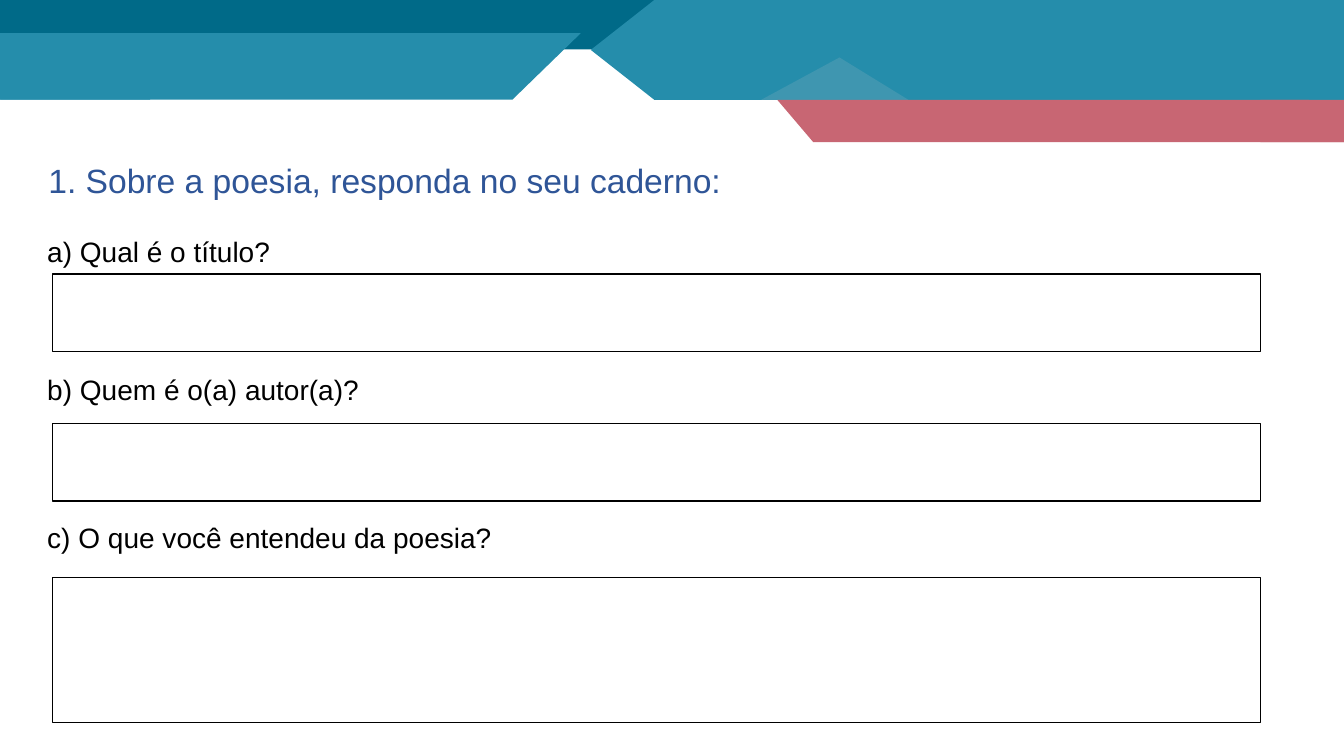
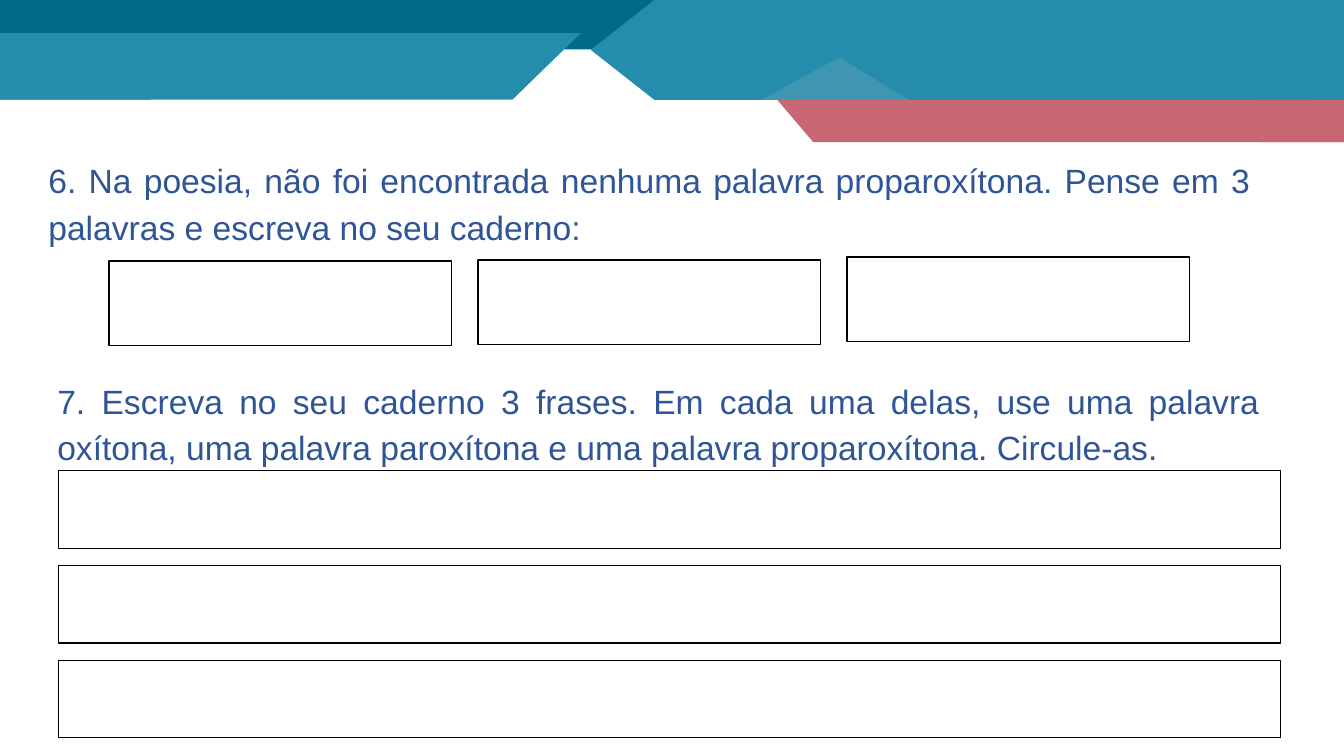
from dataclasses import dataclass

from pptx import Presentation
from pptx.dml.color import RGBColor
from pptx.enum.shapes import MSO_SHAPE
from pptx.enum.text import MSO_ANCHOR, MSO_AUTO_SIZE, PP_ALIGN
from pptx.oxml.ns import qn
from pptx.util import Inches, Pt

RECTANGLE = MSO_SHAPE.RECTANGLE
PARALLELOGRAM = MSO_SHAPE.PARALLELOGRAM
PENTAGON = MSO_SHAPE.PENTAGON
TRIANGLE = MSO_SHAPE.ISOSCELES_TRIANGLE
JUSTIFY = PP_ALIGN.JUSTIFY
TOP = MSO_ANCHOR.TOP
GROW = MSO_AUTO_SIZE.SHAPE_TO_FIT_TEXT
TITLE_ONLY = 5


@dataclass(frozen=True)
class Theme:
    font: str = "Arial"
    question_size: int = 24
    item_size: int = 20
    question_spacing: float = 1.15
    question: str = "2F5597"
    text: str = "000000"
    paper: str = "FFFFFF"
    dark_teal: str = "006A88"
    teal: str = "258DAB"
    light_teal: str = "3F96B0"
    rose: str = "C86673"


THEME = Theme()

# Header band: preset, left, top, width, height, colour, adjustment, mirrored
HEADER = [
    (PARALLELOGRAM, 0, 0, 7.2, 0.49, THEME.dark_teal, 1.028, False),
    (RECTANGLE, 0, 0, 1.49, 0.49, THEME.dark_teal, None, False),
    (PARALLELOGRAM, 0, 0.33, 5.76, 0.66, THEME.teal, 1.028, False),
    (RECTANGLE, 0, 0.33, 1.49, 0.66, THEME.teal, None, False),
    (PENTAGON, 5.86, 0, 7.48, 0.99, THEME.teal, 0.636, True),
    (TRIANGLE, 7.55, 0.57, 1.46, 0.42, THEME.light_teal, 0.532, False),
    (PARALLELOGRAM, 7.71, 0.99, 5.63, 0.42, THEME.rose, 0.85, True),
    (RECTANGLE, 12.5, 0.99, 0.83, 0.42, THEME.rose, None, False),
]


class Worksheet:
    """Holds the style and the slide being drawn."""

    def __init__(self, presentation, theme):
        self.presentation = presentation
        self.theme = theme
        self.slide = None

    def new_slide(self, title, width):
        layout = self.presentation.slide_layouts[TITLE_ONLY]
        self.slide = self.presentation.slides.add_slide(layout)
        self.header()
        shape = self.slide.shapes.title
        shape.left, shape.top = Inches(0.38), Inches(1.48)
        shape.width, shape.height = Inches(width), Inches(0.57)
        self.fill_question(shape, title)

    def header(self):
        group = self.slide.shapes.add_group_shape()
        for preset, left, top, width, height, color, adjustment, mirrored in HEADER:
            shape = self.filled(group.shapes, preset, left, top, width, height, color)
            shape.line.fill.background()
            if adjustment is not None:
                shape.adjustments[0] = adjustment
            if mirrored:
                shape.element.spPr.find(qn("a:xfrm")).set("flipH", "1")

    def filled(self, shapes, preset, left, top, width, height, color):
        shape = shapes.add_shape(
            preset, Inches(left), Inches(top), Inches(width), Inches(height))
        shape.shadow.inherit = False
        shape.fill.solid()
        shape.fill.fore_color.rgb = RGBColor.from_string(color)
        return shape

    def answer_box(self, left, top, width, height=0.77):
        shape = self.filled(self.slide.shapes, RECTANGLE, left, top, width, height,
                            self.theme.paper)
        shape.line.color.rgb = RGBColor.from_string(self.theme.text)
        shape.line.width = Pt(1)

    def text_box(self, left, top, width, height):
        return self.slide.shapes.add_textbox(
            Inches(left), Inches(top), Inches(width), Inches(height))

    def question(self, text, left, top, width):
        self.fill_question(self.text_box(left, top, width, 1.03), text)

    def item(self, text, top):
        self.fill_text(self.text_box(0.37, top, 12.13, 0.44), text,
                       self.theme.item_size, self.theme.text)

    def fill_question(self, shape, text):
        paragraph = self.fill_text(shape, text, self.theme.question_size,
                                   self.theme.question)
        paragraph.line_spacing = self.theme.question_spacing

    def fill_text(self, shape, text, size, color):
        frame = shape.text_frame
        frame.word_wrap = True
        frame.auto_size = GROW
        frame.vertical_anchor = TOP
        paragraph = frame.paragraphs[0]
        paragraph.alignment = JUSTIFY
        run = paragraph.add_run()
        run.text = text
        run.font.name = self.theme.font
        run.font.size = Pt(size)
        run.font.color.rgb = RGBColor.from_string(color)
        return paragraph


def reading_slide(sheet):
    sheet.new_slide("1. Sobre a poesia, responda no seu caderno:", 11.4)
    # Each item: text, text top, box top, box height
    items = [
        ("a) Qual é o título?", 2.28, 2.72, 0.77),
        ("b) Quem é o(a) autor(a)?", 3.65, 4.2, 0.77),
        ("c) O que você entendeu da poesia?", 5.11, 5.73, 1.44),
    ]
    for text, text_top, box_top, box_height in items:
        sheet.item(text, text_top)
        sheet.answer_box(0.52, box_top, 11.98, box_height)


def stress_slide(sheet):
    sheet.new_slide(
        "6. Na poesia, não foi encontrada nenhuma palavra proparoxítona. "
        "Pense em 3 palavras e escreva no seu caderno:", 12.12)
    # One box for each word
    for column, top in enumerate((2.59, 2.58, 2.55)):
        sheet.answer_box(1.08 + 3.66 * column, top, 3.4, 0.84)

    sheet.question(
        "7. Escreva no seu caderno 3 frases. Em cada uma delas, use uma palavra "
        "oxítona, uma palavra paroxítona e uma palavra proparoxítona. Circule-as.",
        0.47, 3.67, 12.12)
    # One box for each sentence
    for row in range(3):
        sheet.answer_box(0.58, 4.67 + 0.94 * row, 12.12)


def main():
    presentation = Presentation()
    presentation.slide_width = Inches(13.33)
    presentation.slide_height = Inches(7.5)
    sheet = Worksheet(presentation, THEME)
    reading_slide(sheet)
    stress_slide(sheet)
    presentation.save("out.pptx")


if __name__ == "__main__":
    main()
